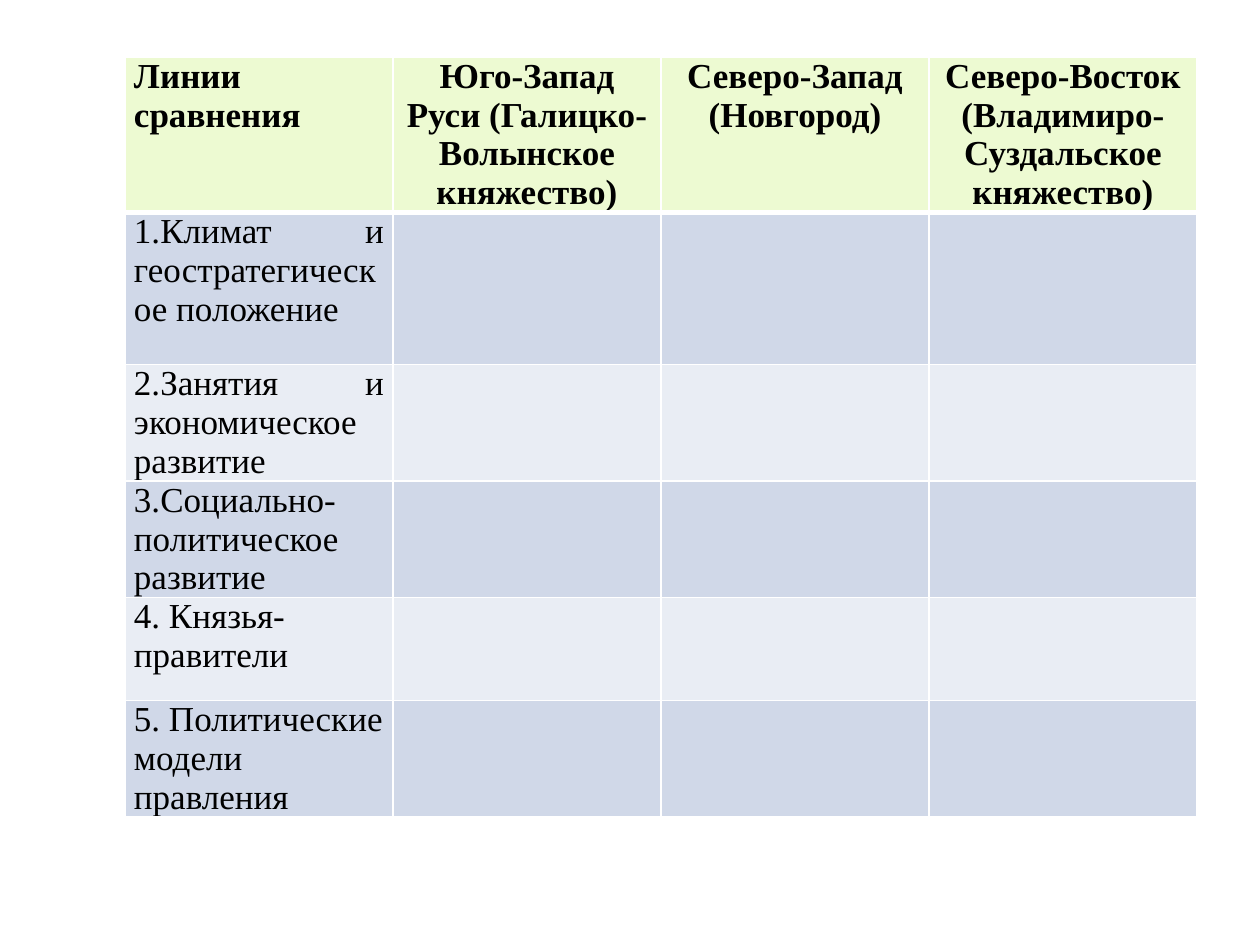
from lxml.etree import SubElement
from pptx import Presentation
from pptx.dml.color import RGBColor
from pptx.enum.text import PP_ALIGN as Align
from pptx.oxml.ns import qn
from pptx.util import Pt

EMU_PER_PX = 914400 // 126
FONT = "Times New Roman"
BLACK, WHITE = "000000", "FFFFFF"
HEADER_FILL = "EDFAD2"
BAND_FILLS = ["D0D8E8", "E9EDF4"]

REGIONS = [
    "Линии сравнения",
    "Юго-Запад Руси (Галицко-Волынское княжество)",
    "Северо-Запад\n(Новгород)",
    "Северо-Восток\n(Владимиро-Суздальское княжество)",
]
CRITERIA = [
    ("1.Климат и геостратегическое положение", Align.JUSTIFY),
    ("2.Занятия и экономическое развитие", Align.JUSTIFY),
    ("3.Социально-политическое развитие", Align.JUSTIFY),
    ("4. Князья-правители", Align.LEFT),
    ("5. Политические модели правления", Align.LEFT),
]
COLUMN_WIDTH = 268
ROW_HEIGHTS = [153, 152, 103, 103, 103, 103]


def px(length):
    return length * EMU_PER_PX


def rgb(color):
    return RGBColor.from_string(color)


def write_cell(cell, text, alignment, bold=False):
    cell.margin_left = cell.margin_right = px(9)
    cell.margin_top = cell.margin_bottom = 0
    cell.text = text
    for paragraph in cell.text_frame.paragraphs:
        paragraph.alignment = alignment
        font = paragraph.font
        font.name, font.size, font.bold = FONT, Pt(20), bold
        font.color.rgb = rgb(BLACK)


def paint_cell(cell, color, top=1, bottom=1):
    """Set the white borders, widths in points, and then the fill."""
    properties = cell._tc.get_or_add_tcPr()
    for side, width in zip("LRTB", (1, 1, top, bottom)):
        border = SubElement(properties, qn(f"a:ln{side}"), w=str(Pt(width)))
        line_fill = SubElement(border, qn("a:solidFill"))
        SubElement(line_fill, qn("a:srgbClr"), val=WHITE)
    cell.fill.solid()
    cell.fill.fore_color.rgb = rgb(color)


def add_comparison_table(slide):
    table = slide.shapes.add_table(
        len(ROW_HEIGHTS), len(REGIONS), px(125), px(57),
        px(COLUMN_WIDTH * len(REGIONS)), px(sum(ROW_HEIGHTS)),
    ).table
    for column in table.columns:
        column.width = px(COLUMN_WIDTH)
    for row, height in zip(table.rows, ROW_HEIGHTS):
        row.height = px(height)

    for index, region in enumerate(REGIONS):
        header = table.cell(0, index)
        write_cell(header, region, Align.CENTER if index else Align.JUSTIFY, bold=True)
        paint_cell(header, HEADER_FILL, bottom=3)

    for index, (criterion, alignment) in enumerate(CRITERIA):
        cells = table.rows[index + 1].cells
        write_cell(cells[0], criterion, alignment)
        for cell in cells:
            paint_cell(cell, BAND_FILLS[index % 2], top=1 if index else 3)


def main():
    presentation = Presentation()
    presentation.slide_width, presentation.slide_height = px(1260), px(945)
    slide = presentation.slides.add_slide(presentation.slide_layouts[6])
    add_comparison_table(slide)
    presentation.save("out.pptx")


if __name__ == "__main__":
    main()
